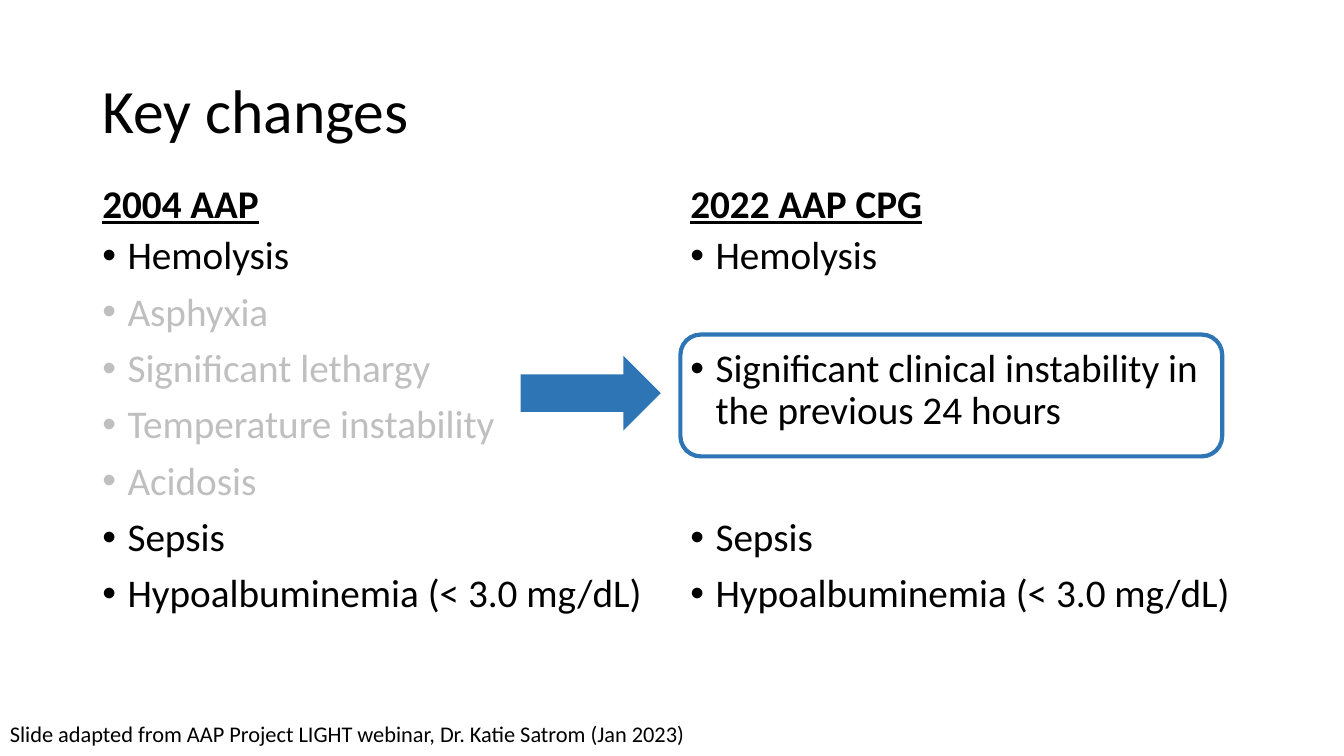
from pptx import Presentation
from pptx.dml.color import RGBColor
from pptx.enum.shapes import MSO_SHAPE
from pptx.enum.text import MSO_ANCHOR
from pptx.util import Pt
from lxml import etree

COLORS = {"text": "000000", "dropped": "BFBFBF", "accent": "2E75B6"}
FONT = "Calibri"
GAP = 10        # space between list items
ROW = 40.25     # one list line with its gap


def rgb(name):
    return RGBColor.from_string(COLORS[name])


def add_run(p, text, size, color="text", bold=False, underline=False):
    r = p.add_run()
    r.text = text
    r.font.name = FONT
    r.font.size = Pt(size)
    r.font.bold = bold
    r.font.underline = underline
    r.font.color.rgb = rgb(color)


def add_box(s, left, top, width, height, anchor=MSO_ANCHOR.TOP):
    sp = s.shapes.add_textbox(Pt(left), Pt(top), Pt(width), Pt(height))
    tf = sp.text_frame
    tf.word_wrap = True
    tf.vertical_anchor = anchor
    return tf


def add_line(s, text, left, top, width, height, size, anchor, spacing=1.0, **style):
    p = add_box(s, left, top, width, height, anchor).paragraphs[0]
    p.line_spacing = spacing
    add_run(p, text, size, **style)


def set_bullet(p, indent):
    pPr = p._p.get_or_add_pPr()
    pPr.set("marL", str(Pt(indent)))
    pPr.set("indent", str(-Pt(indent)))
    ns = pPr.nsmap["a"]
    etree.SubElement(pPr, f"{{{ns}}}buFont", typeface="Arial")
    etree.SubElement(pPr, f"{{{ns}}}buChar", char="•")


def add_list(s, items, left, top, width, height):
    """Each item is its text, its colour and the space before it."""
    tf = add_box(s, left, top, width, height)
    for i, (text, color, before) in enumerate(items):
        p = tf.add_paragraph() if i else tf.paragraphs[0]
        set_bullet(p, 18)
        p.line_spacing = 0.9
        p.space_before = Pt(before)
        add_run(p, text, 28, color)


def add_column(s, heading, items, left, width):
    add_line(s, heading, left, 128, width, 37, 28, MSO_ANCHOR.BOTTOM, 0.8,
             bold=True, underline=True)
    add_list(s, items, left, 165, width, 339)


def add_accent(s, kind, left, top, width, height, outlined=False):
    sp = s.shapes.add_shape(kind, Pt(left), Pt(top), Pt(width), Pt(height))
    sp.shadow.inherit = False
    if outlined:
        sp.fill.background()
        sp.line.color.rgb = rgb("accent")
        sp.line.width = Pt(3)
    else:
        sp.fill.solid()
        sp.fill.fore_color.rgb = rgb("accent")
        sp.line.fill.background()


def main():
    prs = Presentation()
    prs.slide_width, prs.slide_height = Pt(960), Pt(540)
    s = prs.slides.add_slide(prs.slide_layouts[6])

    # Title
    add_line(s, "Key changes", 66, 29, 828, 104, 44, MSO_ANCHOR.MIDDLE, 0.9)

    # Old and new risk factors
    albumin = "Hypoalbuminemia (< 3.0 mg/dL)"
    dropped = ["Asphyxia", "Significant lethargy", "Temperature instability", "Acidosis"]
    old = [("Hemolysis", "text", 0)]
    old += [(text, "dropped", GAP) for text in dropped]
    old += [("Sepsis", "text", GAP), (albumin, "text", GAP)]
    new = [
        ("Hemolysis", "text", 0),
        ("Significant clinical instability in the previous 24 hours", "text", GAP + ROW),
        ("Sepsis", "text", 2 * GAP + ROW),
        (albumin, "text", GAP),
    ]
    add_column(s, "2004 AAP", old, 66, 406)
    add_column(s, "2022 AAP CPG", new, 486, 408)

    # Arrow and frame around the new criterion
    add_accent(s, MSO_SHAPE.RIGHT_ARROW, 372, 254, 100, 53.5)
    add_accent(s, MSO_SHAPE.ROUNDED_RECTANGLE, 486, 239, 387, 87, outlined=True)

    # Source line
    add_line(s, "Slide adapted from AAP Project LIGHT webinar, Dr. Katie Satrom (Jan 2023)",
             0, 511, 509, 27, 16, MSO_ANCHOR.TOP)

    prs.save("out.pptx")


if __name__ == "__main__":
    main()
